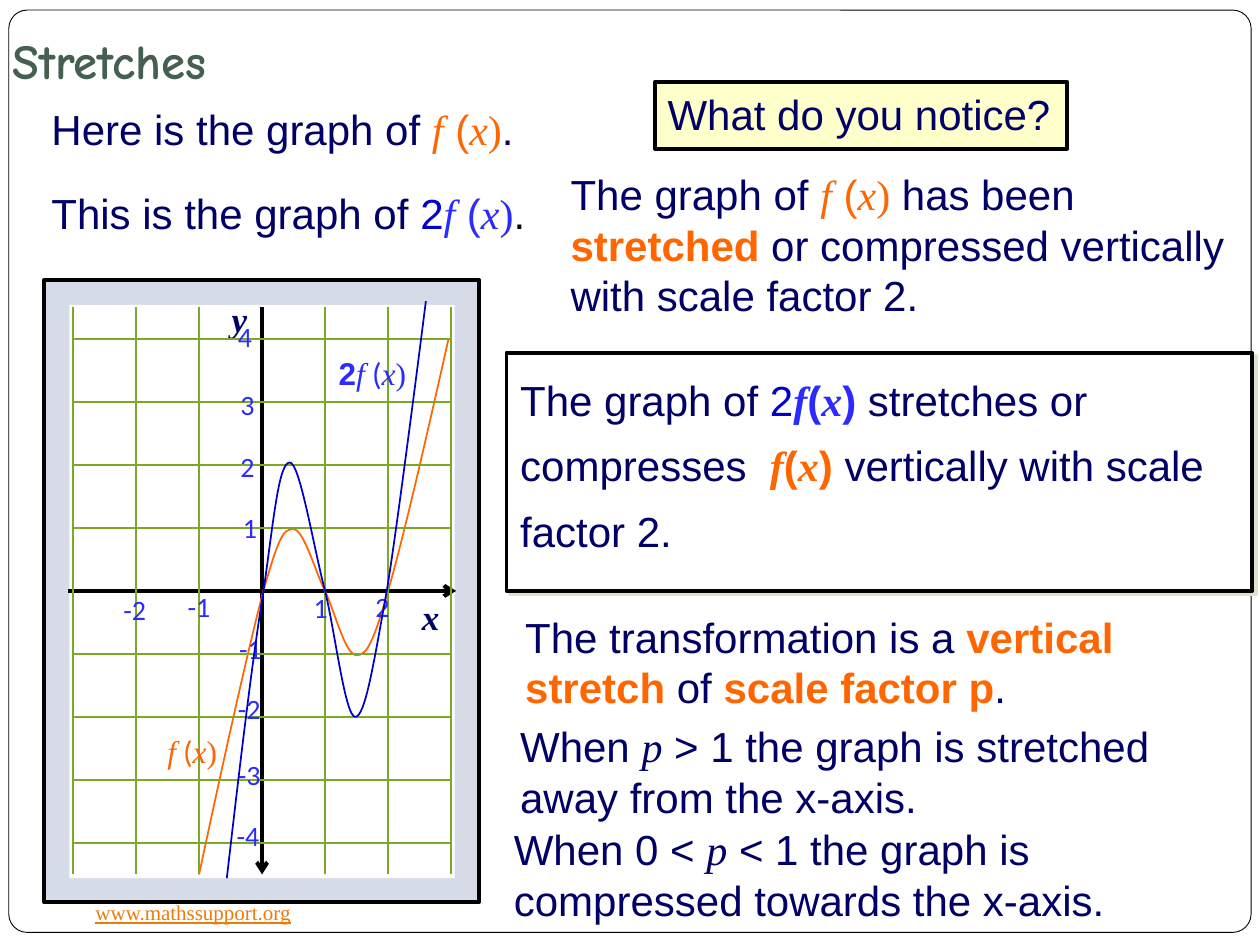
import pptx
import pptx.util
import pptx.dml.color
import pptx.enum.shapes
import pptx.enum.text
import pptx.oxml
import pptx.oxml.ns

Inches, Pt = pptx.util.Inches, pptx.util.Pt
RGBColor = pptx.dml.color.RGBColor
SHAPE = pptx.enum.shapes.MSO_SHAPE
ANCHOR = pptx.enum.text.MSO_ANCHOR
AUTO = pptx.enum.text.MSO_AUTO_SIZE
A_NS = pptx.oxml.ns.nsdecls("a")

BLACK = RGBColor(0x00, 0x00, 0x00)
WHITE = RGBColor(0xFF, 0xFF, 0xFF)
NAVY = RGBColor(0x01, 0x00, 0x66)
ORANGE = RGBColor(0xFF, 0x66, 0x00)
BLUE = RGBColor(0x2B, 0x2B, 0xFF)
DEEP_BLUE = RGBColor(0x00, 0x00, 0xCC)
GREEN = RGBColor(0x7C, 0xA8, 0x27)
TITLE_GREEN = RGBColor(0x45, 0x5F, 0x51)
LINK_ORANGE = RGBColor(0xEE, 0x7B, 0x08)
PANEL = RGBColor(0xD5, 0xDC, 0xE7)
CREAM = RGBColor(0xFF, 0xFF, 0xCC)

SERIF = "Times New Roman"
ORIGIN_X, ORIGIN_Y, UNIT = 2.08, 4.69, 0.5

# Each curve: start point, then cubic segments (two controls and an end)
F_CURVE = [(1.58, 6.94),
           (1.77, 6.05), (1.97, 5.15), (2.09, 4.69),
           (2.22, 4.24), (2.25, 4.2), (2.33, 4.2),
           (2.41, 4.2), (2.5, 4.53), (2.58, 4.69),
           (2.66, 4.86), (2.74, 5.2), (2.83, 5.2),
           (2.91, 5.2), (2.96, 5.11), (3.08, 4.69),
           (3.2, 4.28), (3.38, 3.49), (3.56, 2.69)]
DOUBLE_F_CURVE = [(1.8, 6.97),
                  (1.9, 6.11), (2, 5.25), (2.09, 4.7),
                  (2.17, 4.15), (2.21, 3.67), (2.3, 3.67),
                  (2.38, 3.67), (2.49, 4.35), (2.58, 4.69),
                  (2.66, 5.02), (2.74, 5.69), (2.82, 5.69),
                  (2.9, 5.69), (2.97, 5.24), (3.07, 4.69),
                  (3.16, 4.14), (3.38, 2.39), (3.38, 2.39)]

# Axis numbers: text, left, top
AXIS_NUMBERS = [("1", 2.39, 4.64), ("1", 1.83, 4), ("-1", 1.39, 4.63), ("-1", 1.8, 4.96),
                ("2", 2.88, 4.63), ("-2", 0.88, 4.65), ("2", 1.81, 3.52), ("3", 1.81, 3.03),
                ("4", 1.79, 2.49), ("-2", 1.79, 5.44), ("-3", 1.79, 5.96), ("-4", 1.78, 6.45)]


def run(text, color=NAVY, font="Arial", bold=False, italic=False):
    return text, color, font, bold, italic


def f_of_x(color, open_font="Arial"):
    return [run("f", color, SERIF, italic=True), run(" (", color, open_font),
            run("x", color, SERIF, italic=True), run(")", color, SERIF)]


def bold_f_of_x(color, close=")"):
    return [run("f", color, SERIF, True, True), run("(", color, bold=True),
            run("x", color, SERIF, True, True), run(close, color, bold=True)]


def set_font(font, color, name, bold, italic):
    font.color.rgb = color
    font.name = name
    font.bold = bold
    font.italic = italic


def write(s, runs, size, wrap):
    tf = s.text_frame
    tf.word_wrap = wrap
    p = tf.paragraphs[0]
    p.alignment = pptx.enum.text.PP_ALIGN.LEFT
    p.font.size = Pt(size)
    if len(runs) == 1:
        set_font(p.font, *runs[0][1:])
    for text, *style in runs:
        r = p.add_run()
        r.text = text
        if len(runs) > 1:
            set_font(r.font, *style)
    return p


def add_text(slide, at, runs, size=24, wrap=True):
    s = slide.shapes.add_textbox(*map(Inches, at))
    p = write(s, runs, size, wrap)
    s.text_frame.auto_size = AUTO.SHAPE_TO_FIT_TEXT
    return s, p


def add_box(slide, at, fill, width=2.25, kind=SHAPE.RECTANGLE):
    s = slide.shapes.add_shape(kind, *map(Inches, at))
    s.shadow.inherit = False
    s.fill.solid()
    s.fill.fore_color.rgb = fill
    if width:
        s.line.color.rgb = BLACK
        s.line.width = Pt(width)
    else:
        s.line.fill.background()
    return s


def add_line(slide, x1, y1, x2, y2, color, width, arrow=False):
    s = slide.shapes.add_connector(pptx.enum.shapes.MSO_CONNECTOR.STRAIGHT,
                                   *map(Inches, (x1, y1, x2, y2)))
    s.line.color.rgb = color
    s.line.width = Pt(width)
    if arrow:
        s.line._get_or_add_ln().append(pptx.oxml.parse_xml(f'<a:tailEnd {A_NS} type="arrow"/>'))
    s._element.spPr.append(pptx.oxml.parse_xml(f"<a:effectLst {A_NS}/>"))


def add_curve(slide, points, color):
    points = [(Inches(x), Inches(y)) for x, y in points]
    builder = slide.shapes.build_freeform(*points[0])
    builder.add_line_segments(points[3::3], close=False)
    s = builder.convert_to_shape()
    # Turn each straight segment into a cubic one
    segments = list(s._element.spPr.iter(pptx.oxml.ns.qn("a:lnTo")))
    for i, segment in enumerate(segments):
        pts = "".join(f'<a:pt x="{x - s.left}" y="{y - s.top}"/>'
                      for x, y in points[3 * i + 1:3 * i + 4])
        cubic = pptx.oxml.parse_xml(f"<a:cubicBezTo {A_NS}>{pts}</a:cubicBezTo>")
        segment.getparent().replace(segment, cubic)
    s.shadow.inherit = False
    s.fill.background()
    s.line.color.rgb = color
    s.line.width = Pt(1)


def add_grid(slide):
    for k in range(-4, 5):
        if k == 0:
            continue
        x, y = ORIGIN_X + k * UNIT, ORIGIN_Y + k * UNIT
        if abs(k) <= 3:
            add_line(slide, x, 2.44, x, 6.94, GREEN, 0.75)
        add_line(slide, 0.58, y, 3.58, y, GREEN, 0.75)


def add_graph(slide):
    add_box(slide, (0.35, 2.22, 3.45, 4.94), PANEL)
    add_box(slide, (0.55, 2.42, 3.06, 4.55), WHITE, width=0)
    # Axes
    add_line(slide, 0.54, ORIGIN_Y, 3.62, ORIGIN_Y, BLACK, 2.25, arrow=True)
    add_line(slide, ORIGIN_X, 2.44, ORIGIN_X, 6.94, BLACK, 2.25, arrow=True)
    for name, x, y, width in (("x", 3.25, 4.68, 0.34), ("y", 1.74, 2.31, 0.32)):
        add_text(slide, (x, y, width, 0.43), [run(name, NAVY, SERIF, True, True)], 20, False)
    # Curves, grid and labels
    add_curve(slide, F_CURVE, ORANGE)
    add_grid(slide)
    for number, x, y in AXIS_NUMBERS:
        width = 0.38 if number.startswith("-") else 0.32
        add_text(slide, (x, y, width, 0.37), [run(number, BLUE, "Calibri")], 16, False)
    add_text(slide, (1.23, 5.76, 0.6, 0.4), f_of_x(ORANGE, "Calibri"), 18, False)
    add_text(slide, (2.59, 2.76, 0.74, 0.4),
             [run("2", BLUE, bold=True)] + f_of_x(BLUE, "Calibri"), 18, False)
    add_curve(slide, DOUBLE_F_CURVE, DEEP_BLUE)


def add_rule_box(slide):
    s = add_box(slide, (4.02, 2.8, 5.92, 1.89), WHITE)
    s._element.spPr.find(pptx.oxml.ns.qn("a:effectLst")).append(pptx.oxml.parse_xml(
        f'<a:outerShdw {A_NS} dist="35560" dir="2700000" algn="ctr" rotWithShape="0">'
        '<a:srgbClr val="E2DFCC"/></a:outerShdw>'))
    _, p = add_text(slide, (4.03, 2.8, 5.92, 1.68),
                    [run("The graph of "), run("2", DEEP_BLUE)] + bold_f_of_x(BLUE, ") ")
                    + [run("stretches or compresses  ")] + bold_f_of_x(ORANGE)
                    + [run(" vertically with scale factor 2.")])
    p.line_spacing = 1.3


def add_p_rule(slide, at, before, after):
    add_text(slide, at, [run(before), run("p", NAVY, SERIF, italic=True), run(after)])


def main():
    prs = pptx.Presentation()
    prs.slide_width, prs.slide_height = Inches(10), Inches(7.5)
    slide = prs.slides.add_slide(prs.slide_layouts[6])

    # Frame, footer and title
    frame = add_box(slide, (0.07, 0.08, 9.86, 7.32), WHITE, 0.5, SHAPE.ROUNDED_RECTANGLE)
    frame.adjustments[0] = 0.02
    _, p = add_text(slide, (0.66, 7.09, 1.77, 0.3),
                    [run("www.mathssupport.org", LINK_ORANGE, SERIF)], 12, False)
    p.font.underline = True
    title, _ = add_text(slide, (0, 0.3, 9, 0.51),
                        [run("Stretches", TITLE_GREEN, "Comic Neue", True)], 28)
    title.text_frame.auto_size = AUTO.NONE
    title.text_frame.vertical_anchor = ANCHOR.BOTTOM
    title.text_frame.margin_bottom = Inches(0.1)

    # Left column
    add_text(slide, (0.31, 0.77, 3.98, 0.5),
             [run("Here is the graph of ")] + f_of_x(ORANGE) + [run(".")])
    add_text(slide, (0.31, 1.44, 4, 0.5), [run("This is the graph of "), run("2", DEEP_BLUE)]
             + f_of_x(BLUE) + [run(".", BLACK)], wrap=False)
    add_graph(slide)

    # Right column
    question = add_box(slide, (5.2, 0.65, 3.27, 0.53), CREAM)
    write(question, [run("What do you notice?")], 24, False)
    question.text_frame.vertical_anchor = ANCHOR.TOP
    add_text(slide, (4.43, 1.29, 5.53, 1.31),
             [run("The graph of ")] + f_of_x(ORANGE)
             + [run(" has been "), run("stretched", ORANGE, bold=True),
                run(" or compressed vertically with scale factor 2.")])
    add_rule_box(slide)
    add_text(slide, (4.07, 4.8, 5.53, 0.91),
             [run("The transformation is a "), run("vertical stretch", ORANGE, bold=True),
              run(" of "), run("scale factor p", ORANGE, bold=True), run(".")])
    add_p_rule(slide, (4.03, 5.67, 5.78, 0.91), "When ",
               " > 1 the graph is stretched away from the x-axis.")
    add_p_rule(slide, (3.98, 6.49, 5.96, 0.91), "When 0 < ",
               " < 1 the graph is compressed towards the x-axis.")

    prs.save("out.pptx")


if __name__ == "__main__":
    main()
